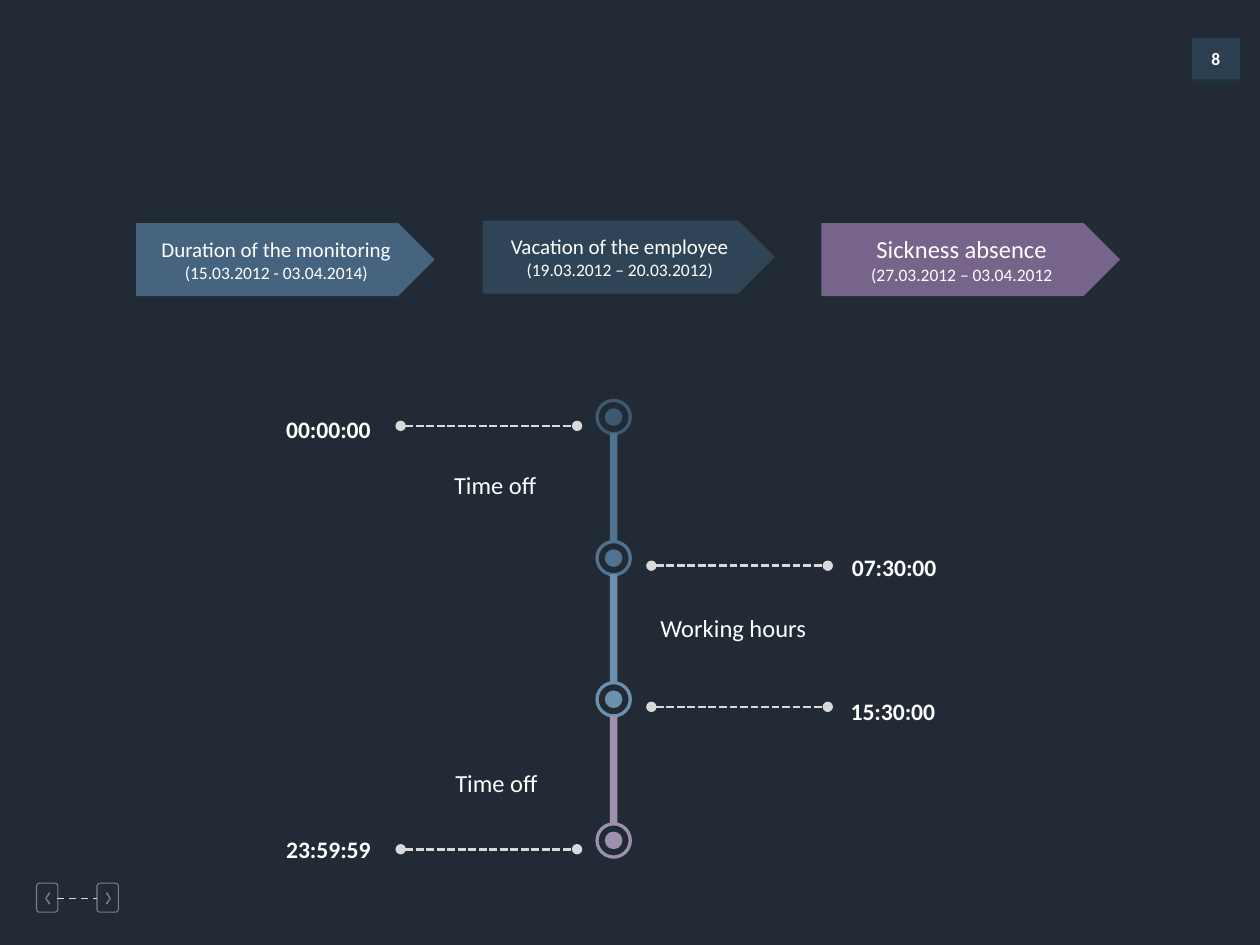
from lxml import etree
from pptx import Presentation
from pptx.dml.color import RGBColor
from pptx.enum.dml import MSO_LINE_DASH_STYLE as DASH
from pptx.enum.shapes import MSO_CONNECTOR, MSO_SHAPE as SHAPE
from pptx.enum.text import MSO_ANCHOR, PP_ALIGN as ALIGN
from pptx.oxml.ns import qn
from pptx.util import Inches, Pt

COLORS = {
    "background": "222A35", "text": "FFFFFF", "dash": "D9D9D9", "button": "808080",
    "badge": "2C3F50", "badge_edge": "212F3C",
    "monitoring": "46647F", "vacation": "304457", "sickness": "76648B",
    "midnight": "3E5972", "morning": "507392", "afternoon": "6D90AF", "evening": "9E90AF",
}

presentation = Presentation()
presentation.slide_width = Inches(10)
presentation.slide_height = Inches(7.5)
slide = presentation.slides.add_slide(presentation.slide_layouts[6])
shapes = slide.shapes
slide.background.fill.solid()
slide.background.fill.fore_color.rgb = RGBColor.from_string(COLORS["background"])


def paint(shape, color):
    """Give a shape a plain fill with no line or shadow."""
    shape.shadow.inherit = False
    shape.fill.solid()
    shape.fill.fore_color.rgb = RGBColor.from_string(COLORS[color])
    shape.line.fill.background()
    return shape


def write(shape, lines, align, bold=False):
    """Fill a shape with one paragraph per (text, size) pair."""
    frame = shape.text_frame
    frame.word_wrap = True
    for index, (text, size) in enumerate(lines):
        paragraph = frame.add_paragraph() if index else frame.paragraphs[0]
        paragraph.alignment = align
        run = paragraph.add_run()
        run.text = text
        font_values = {"name": "Calibri", "size": Pt(size), "bold": bold}
        for name, value in font_values.items():
            setattr(run.font, name, value)
        run.font.color.rgb = RGBColor.from_string(COLORS["text"])


# Page number badge
for top, height, color in [(0.3, 0.38, "badge"), (0.63, 0.05, "badge_edge")]:
    paint(shapes.add_shape(SHAPE.RECTANGLE, Inches(9.46), Inches(top),
                           Inches(0.38), Inches(height)), color)
page_number = shapes.add_textbox(Inches(9.46), Inches(0.33), Inches(0.38), Inches(0.28))
write(page_number, [("8", 10)], ALIGN.CENTER, bold=True)

# Previous and next buttons: the second chevron mirrors the first
chevron = [(0.4, 7.09), (0.37, 7.13), (0.4, 7.17), (0.39, 7.18), (0.36, 7.13), (0.39, 7.08)]
for left, mirrored in [(0.29, False), (0.77, True)]:
    points = [(Inches(1.24 - x if mirrored else x), Inches(y)) for x, y in chevron]
    builder = shapes.build_freeform(*points[0])
    builder.add_line_segments(points[1:])
    paint(builder.convert_to_shape(), "button")
    button = shapes.add_shape(SHAPE.ROUNDED_RECTANGLE, Inches(left), Inches(7.01),
                              Inches(0.17), Inches(0.23))
    button.adjustments[0] = 0.14
    button.shadow.inherit = False
    button.fill.background()
    button.line.color.rgb = RGBColor.from_string(COLORS["button"])
    button.line.width = Pt(0.6)

# Period banners
banners = [
    (1.08, 1.77, 2.37, "monitoring", "Duration of the monitoring", 12, "(15.03.2012 - 03.04.2014)"),
    (3.83, 1.75, 2.32, "vacation", "Vacation of the employee", 12, "(19.03.2012 – 20.03.2012)"),
    (6.52, 1.77, 2.37, "sickness", "Sickness absence", 14, "(27.03.2012 – 03.04.2012"),
]
for left, top, width, color, title, size, dates in banners:
    banner = paint(shapes.add_shape(SHAPE.PENTAGON, Inches(left), Inches(top),
                                    Inches(width), Inches(0.58)), color)
    banner.text_frame.vertical_anchor = MSO_ANCHOR.MIDDLE
    write(banner, [(title, size), (dates, 10)], ALIGN.CENTER)

# Vertical timeline: each later milestone has a bar leading down to it
AXIS, FIRST, STEP = 4.87, 3.31, 1.12
for index, color in enumerate(["midnight", "morning", "afternoon", "evening"]):
    center = FIRST + index * STEP
    if index:
        paint(shapes.add_shape(SHAPE.RECTANGLE, Inches(AXIS - 0.03), Inches(center - 0.99),
                               Inches(0.06), Inches(0.86)), color)
    for kind, size in [(SHAPE.OVAL, 0.14), (SHAPE.DONUT, 0.29)]:
        mark = paint(shapes.add_shape(kind, Inches(AXIS - size / 2), Inches(center - size / 2),
                                      Inches(size), Inches(size)), color)
        if kind == SHAPE.DONUT:
            mark.adjustments[0] = 0.09

# Dashed lines: start, end, height, width, dash, round ends
dashes = [(0.45, 0.77, 7.13, 1, DASH.DASH, False)]
for start, y in [(3.18, 3.38), (5.17, 4.49), (5.17, 5.61), (3.18, 6.74)]:
    dashes.append((start, start + 1.4, y, 1.5, DASH.SQUARE_DOT, True))
for start, end, y, width, dash, round_ends in dashes:
    connector = shapes.add_connector(MSO_CONNECTOR.STRAIGHT, Inches(start), Inches(y),
                                     Inches(end), Inches(y))
    connector.line.color.rgb = RGBColor.from_string(COLORS["dash"])
    connector.line.width = Pt(width)
    connector.line.dash_style = dash
    if round_ends:
        outline = connector.line._get_or_add_ln()
        for tag in ("a:headEnd", "a:tailEnd"):
            etree.SubElement(outline, qn(tag), type="oval")
    etree.SubElement(connector._element.spPr, qn("a:effectLst"))

# Clock times and the spans between them
labels = [
    (0.71, 3.24, 2.33, "00:00:00", True),
    (5.2, 4.34, 2.33, "07:30:00", True),
    (5.19, 5.48, 2.33, "15:30:00", True),
    (0.71, 6.58, 2.33, "23:59:59", True),
    (4.84, 4.82, 1.96, "Working hours", False),
    (3.04, 3.68, 1.78, "Time off", False),
    (3.05, 6.05, 1.78, "Time off", False),
]
for left, top, width, text, is_time in labels:
    label = shapes.add_textbox(Inches(left), Inches(top), Inches(width), Inches(0.33))
    write(label, [(text, 13.5 if is_time else 14)],
          ALIGN.RIGHT if is_time else ALIGN.CENTER, bold=is_time)

presentation.save("out.pptx")
